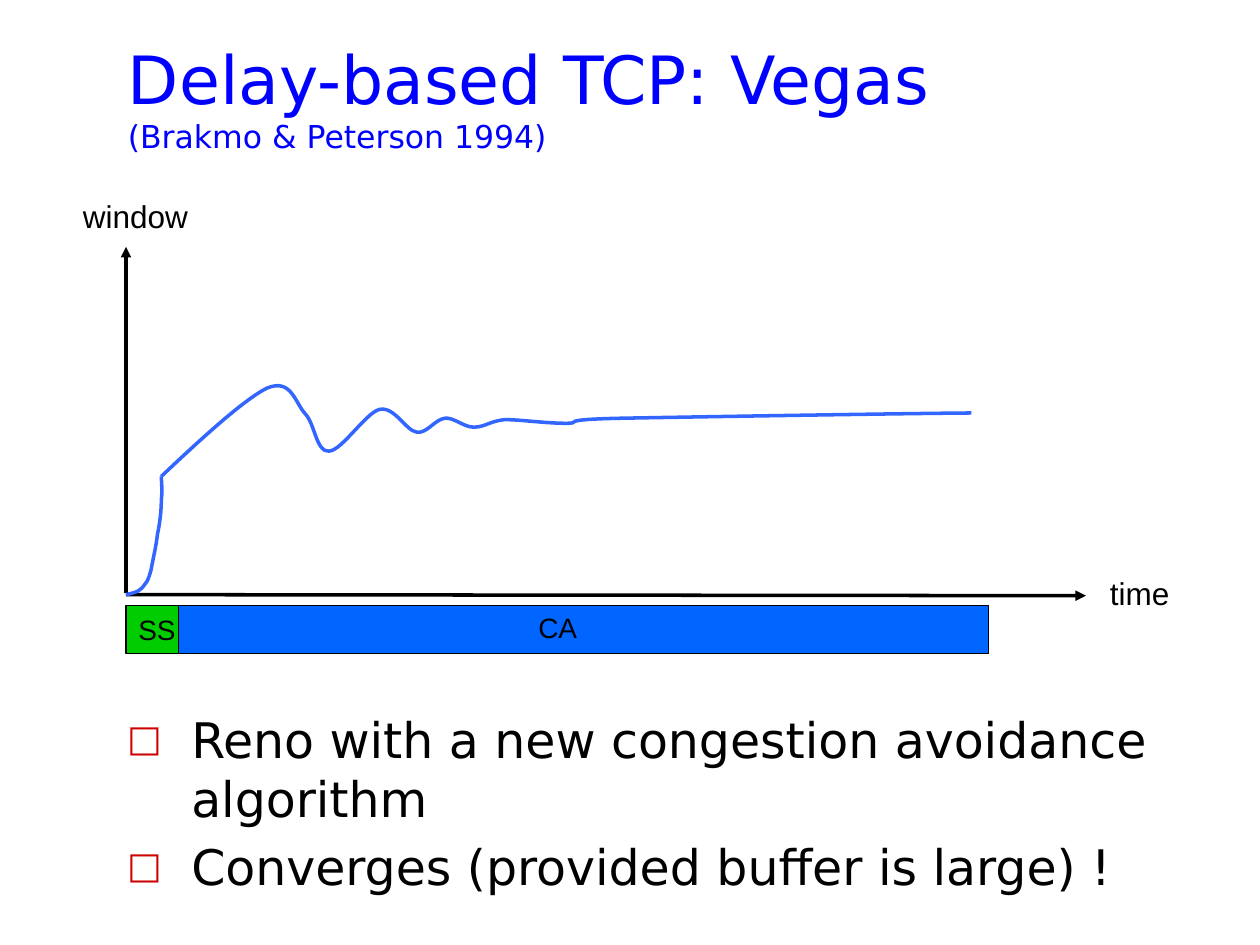
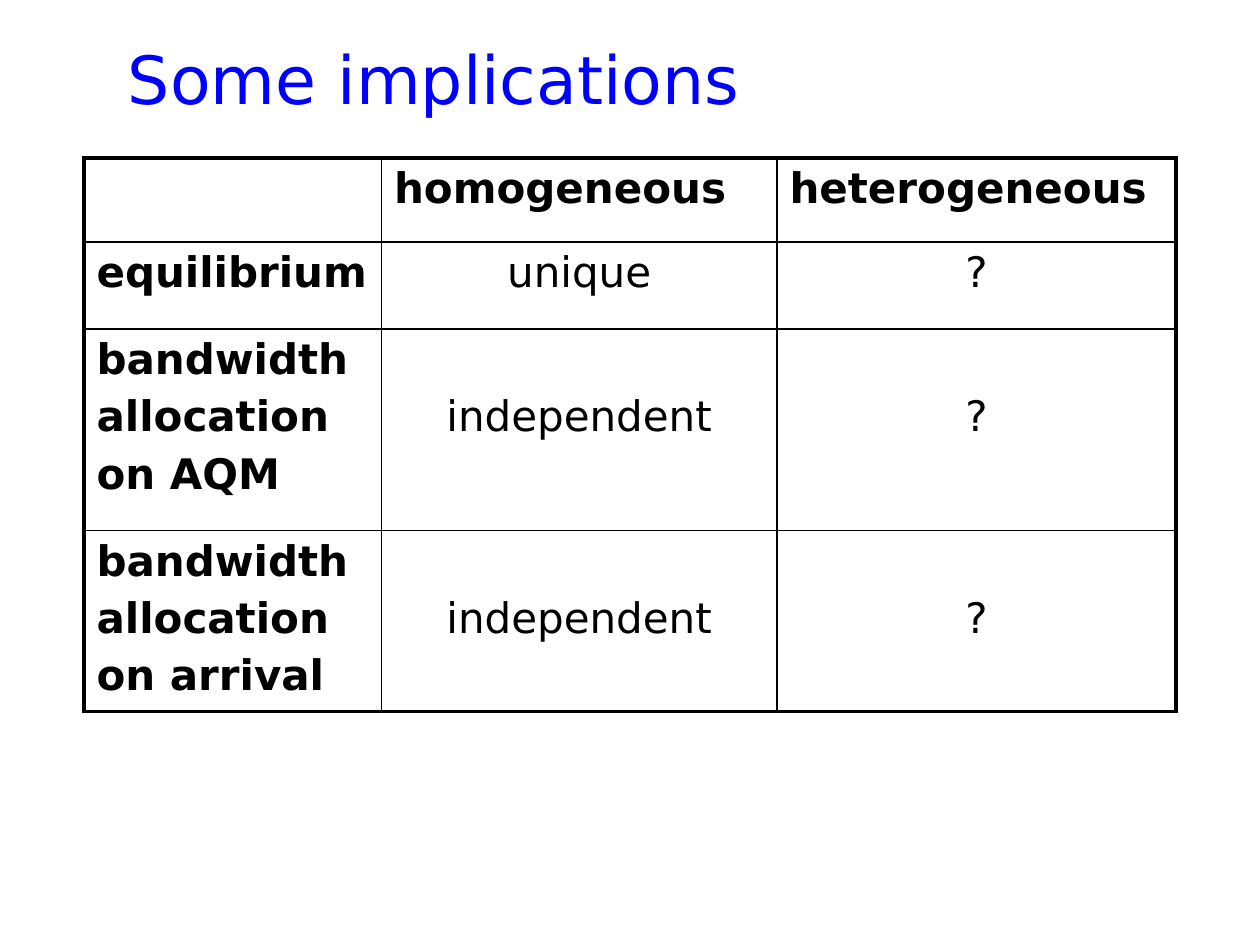
"""Builds two slides on delay-based congestion control."""
from typing import NamedTuple

from lxml import etree
from pptx import Presentation
from pptx.dml.color import RGBColor
from pptx.enum import shapes, text
from pptx.oxml import ns
from pptx.util import Pt

BLACK = RGBColor(0x00, 0x00, 0x00)
WHITE = RGBColor(0xFF, 0xFF, 0xFF)
TITLE_BLUE = RGBColor(0x00, 0x00, 0xFF)
CURVE_BLUE = RGBColor(0x33, 0x66, 0xFF)
PHASE_BLUE = RGBColor(0x00, 0x66, 0xFF)
PHASE_GREEN = RGBColor(0x00, 0xCC, 0x00)
BULLET_RED = RGBColor(0xCC, 0x00, 0x00)

HEADING_FONT = "DejaVu Sans"
LABEL_FONT = "Arial"
OUTER_BORDER, INNER_BORDER = 2.25, 1


class Box(NamedTuple):
    """A rectangle in points."""
    left: float
    top: float
    width: float
    height: float

    def lengths(self) -> list:
        """Return the four values as lengths."""
        return [Pt(value) for value in self]


class Label(NamedTuple):
    """A chart label."""
    text: str
    box: Box
    size: float


class Phase(NamedTuple):
    """A coloured bar under the time axis."""
    text: str
    box: Box
    color: RGBColor


class Axis(NamedTuple):
    """An arrow from a start to an end point."""
    start: tuple
    end: tuple


TITLE_BOX = Box(66, 18, 636, 66)
BODY_BOX = Box(65.5, 401.8, 654.5, 131.8)
AXES = [Axis((72, 339.8), (620.6, 340.4)), Axis((72, 339.1), (72, 141.1))]
SLOW_START = Phase("SS", Box(72, 346, 30, 27.4), PHASE_GREEN)
AVOIDANCE = Phase("", Box(102, 346, 463, 27.4), PHASE_BLUE)
AXIS_LABELS = [
    Label("time", Box(627.1, 324.7, 49, 28.8), 18),
    Label("window", Box(40.3, 109.1, 74.9, 28.8), 18),
]
AVOIDANCE_LABEL = Label("CA", Box(300.5, 345.6, 36.7, 26.6), 16)
BULLETS = ["Reno with a new congestion avoidance algorithm",
           "Converges (provided buffer is large) !"]

SLOW_START_CURVE = [
    (72, 339.8),
    (74.9, 339.1), (78.5, 338.4), (79.9, 337),
    (82.1, 335.5), (82.8, 333.4), (84.2, 331.9),
    (85, 329.8), (85, 330.5), (86.4, 325.4),
    (87.1, 321.1), (89.3, 311.8), (90, 305.3),
    (91.4, 298.8), (92.2, 291.6), (92.2, 285.8),
    (92.9, 280.8), (92.2, 274.3), (92.2, 272.2),
]
AVOIDANCE_CURVE = [
    (92.2, 272.2),
    (115.9, 249.8), (139.7, 228.2), (152.6, 221.8),
    (166.3, 216), (168.5, 229.7), (174.2, 236.2),
    (180, 241.9), (180.7, 258.5), (187.9, 257.8),
    (195.1, 257.8), (208.8, 236.2), (216.7, 234),
    (225.4, 231.8), (231.8, 246.2), (238.3, 247),
    (244.1, 247.7), (248.4, 239.8), (254.2, 239),
    (259.2, 238.3), (265, 244.1), (270.7, 244.1),
    (277.2, 244.1), (280.1, 240.5), (288.7, 239.8),
    (297.4, 239.8), (311.8, 241.9), (323.3, 241.9),
    (334.1, 241.9), (316.1, 239.8), (355, 239),
    (393.8, 238.3), (521.3, 236.2), (555.1, 236),
]

COLUMN_WIDTHS = [170, 226, 228]
ROW_HEIGHTS = [48.2, 49.7, 115.2, 100.6]
TABLE_BOX = Box(48, 90.2, sum(COLUMN_WIDTHS), sum(ROW_HEIGHTS))
TABLE_ROWS = [
    ("", "homogeneous", "heterogeneous"),
    ("equilibrium", "unique", "?"),
    ("bandwidth\nallocation\non AQM", "independent", "?"),
    ("bandwidth\nallocation\non arrival", "independent", "?"),
]
CELL_SIZE = 24
CELL_GAP = 4.8
SECOND_LINE_TOP = 36.4


def add_child(parent, tag: str, **attributes: str):
    """Append a DrawingML element to a parent."""
    return etree.SubElement(parent, ns.qn(f"a:{tag}"), attributes)


def style_font(font, size: float, name: str, color: RGBColor = BLACK) -> None:
    """Set the size, typeface and colour of a font."""
    font.size, font.name = Pt(size), name
    font.color.rgb = color


def add_text_frame(slide, box: Box, wrap: bool = True):
    """Add a text box and return its frame."""
    frame = slide.shapes.add_textbox(*box.lengths()).text_frame
    frame.word_wrap = wrap
    return frame


def add_title(slide, *lines: tuple) -> None:
    """Add the slide title from lines of text and size."""
    paragraph = add_text_frame(slide, TITLE_BOX).paragraphs[0]
    for index, (content, size) in enumerate(lines):
        if index:
            paragraph.add_line_break()
        run = paragraph.add_run()
        run.text = content
        style_font(run.font, size, HEADING_FONT, TITLE_BLUE)


def add_label(slide, label: Label) -> None:
    """Add a one-line chart label."""
    frame = add_text_frame(slide, label.box, wrap=False)
    frame.auto_size = text.MSO_AUTO_SIZE.SHAPE_TO_FIT_TEXT
    frame.text = label.text
    style_font(frame.paragraphs[0].font, label.size, LABEL_FONT)


def add_phase(slide, phase: Phase) -> None:
    """Add a phase bar, with its name where it has one."""
    shape = slide.shapes.add_shape(
        shapes.MSO_SHAPE.RECTANGLE, *phase.box.lengths())
    shape.shadow.inherit = False
    shape.fill.solid()
    shape.fill.fore_color.rgb = phase.color
    shape.line.color.rgb = BLACK
    shape.line.width = Pt(0.75)
    if phase.text:
        frame = shape.text_frame
        frame.word_wrap = False
        frame.margin_right = 0
        frame.vertical_anchor = text.MSO_ANCHOR.MIDDLE
        frame.text = phase.text
        paragraph = frame.paragraphs[0]
        paragraph.alignment = text.PP_ALIGN.LEFT
        style_font(paragraph.font, 16, LABEL_FONT)


def add_axis(slide, axis: Axis) -> None:
    """Add an axis with an arrowhead at its end."""
    connector = slide.shapes.add_connector(
        shapes.MSO_CONNECTOR.STRAIGHT,
        *[Pt(value) for value in axis.start + axis.end])
    connector.line.color.rgb = BLACK
    connector.line.width = Pt(2)
    add_child(connector.get_or_add_ln(), "tailEnd", type="triangle")
    add_child(connector.element.spPr, "effectLst")


def bend_segments(shape) -> None:
    """Turn every three straight segments into one cubic Bezier segment."""
    segments = list(shape.element.iter(ns.qn("a:lnTo")))
    for first in range(0, len(segments), 3):
        curve, *others = segments[first:first + 3]
        curve.tag = ns.qn("a:cubicBezTo")
        for other in others:
            curve.append(other[0])
            other.getparent().remove(other)


def add_curve(slide, points: list) -> None:
    """Draw a window-size curve from its Bezier points."""
    start, *rest = [(Pt(x), Pt(y)) for x, y in points]
    builder = slide.shapes.build_freeform(*start)
    builder.add_line_segments(rest, close=False)
    shape = builder.convert_to_shape()
    bend_segments(shape)
    shape.shadow.inherit = False
    shape.fill.background()
    shape.line.color.rgb = CURVE_BLUE
    shape.line.width = Pt(2)


def add_bullets(slide, items: list) -> None:
    """Add the list with red square bullets."""
    frame = add_text_frame(slide, BODY_BOX)
    frame.text = "\n".join(items)
    for index, paragraph in enumerate(frame.paragraphs):
        properties = paragraph._p.get_or_add_pPr()
        properties.set("marL", str(Pt(36.7)))
        properties.set("indent", str(Pt(-36.7)))
        add_child(add_child(properties, "buClr"), "srgbClr",
                  val=str(BULLET_RED))
        add_child(properties, "buSzPct", val="75000")
        add_child(properties, "buFont", typeface=HEADING_FONT)
        add_child(properties, "buChar", char="□")
        if index:
            paragraph.space_before = Pt(5.6)
        style_font(paragraph.font, 28, HEADING_FONT)


def set_borders(cell, outer_sides: dict) -> None:
    """Draw thick lines on the table's edge and thin ones inside."""
    properties = cell._tc.get_or_add_tcPr()
    for position, (side, is_outer) in enumerate(outer_sides.items()):
        width = OUTER_BORDER if is_outer else INNER_BORDER
        line = etree.Element(ns.qn(f"a:ln{side}"), w=str(Pt(width)))
        add_child(add_child(line, "solidFill"), "srgbClr", val=str(BLACK))
        properties.insert(position, line)


def fill_cell(cell, content: str, is_heading: bool) -> None:
    """Write a cell as a bold heading or a centred value."""
    cell.fill.solid()
    cell.fill.fore_color.rgb = WHITE
    cell.text = content
    for index, paragraph in enumerate(cell.text_frame.paragraphs):
        if index:
            paragraph.space_before = Pt(CELL_GAP)
        if not is_heading:
            paragraph.alignment = text.PP_ALIGN.CENTER
        style_font(paragraph.font, CELL_SIZE, HEADING_FONT)
        paragraph.font.bold = is_heading


def add_implications_table(slide) -> None:
    """Add the table that compares both cases."""
    last_row, last_column = len(ROW_HEIGHTS) - 1, len(COLUMN_WIDTHS) - 1
    table = slide.shapes.add_table(
        last_row + 1, last_column + 1, *TABLE_BOX.lengths()).table
    table.first_row = table.horz_banding = False
    for column, width in zip(table.columns, COLUMN_WIDTHS):
        column.width = Pt(width)
    for row, (height, contents) in enumerate(zip(ROW_HEIGHTS, TABLE_ROWS)):
        table.rows[row].height = Pt(height)
        for column, content in enumerate(contents):
            cell = table.cell(row, column)
            fill_cell(cell, content, row == 0 or column == 0)
            if column and "\n" in contents[0]:
                cell.margin_top = Pt(SECOND_LINE_TOP)
            set_borders(cell, {"L": column == 0, "R": column == last_column,
                               "T": row == 0, "B": row == last_row})


def build_vegas_slide(slide) -> None:
    """Build the slide with the window curve."""
    add_title(slide, ("Delay-based TCP: Vegas", 38),
              ("(Brakmo & Peterson 1994)", 18))
    add_bullets(slide, BULLETS)
    add_phase(slide, SLOW_START)
    for axis in AXES:
        add_axis(slide, axis)
    add_curve(slide, SLOW_START_CURVE)
    for label in AXIS_LABELS:
        add_label(slide, label)
    add_phase(slide, AVOIDANCE)
    add_label(slide, AVOIDANCE_LABEL)
    add_curve(slide, AVOIDANCE_CURVE)


def build_implications_slide(slide) -> None:
    """Build the slide with the comparison table."""
    add_title(slide, ("Some implications", 38))
    add_implications_table(slide)


def main() -> None:
    """Build and save the presentation."""
    presentation = Presentation()
    presentation.slide_width, presentation.slide_height = Pt(720), Pt(540)
    blank = presentation.slide_layouts[6]
    for build in (build_vegas_slide, build_implications_slide):
        build(presentation.slides.add_slide(blank))
    presentation.save("out.pptx")


if __name__ == "__main__":
    main()
